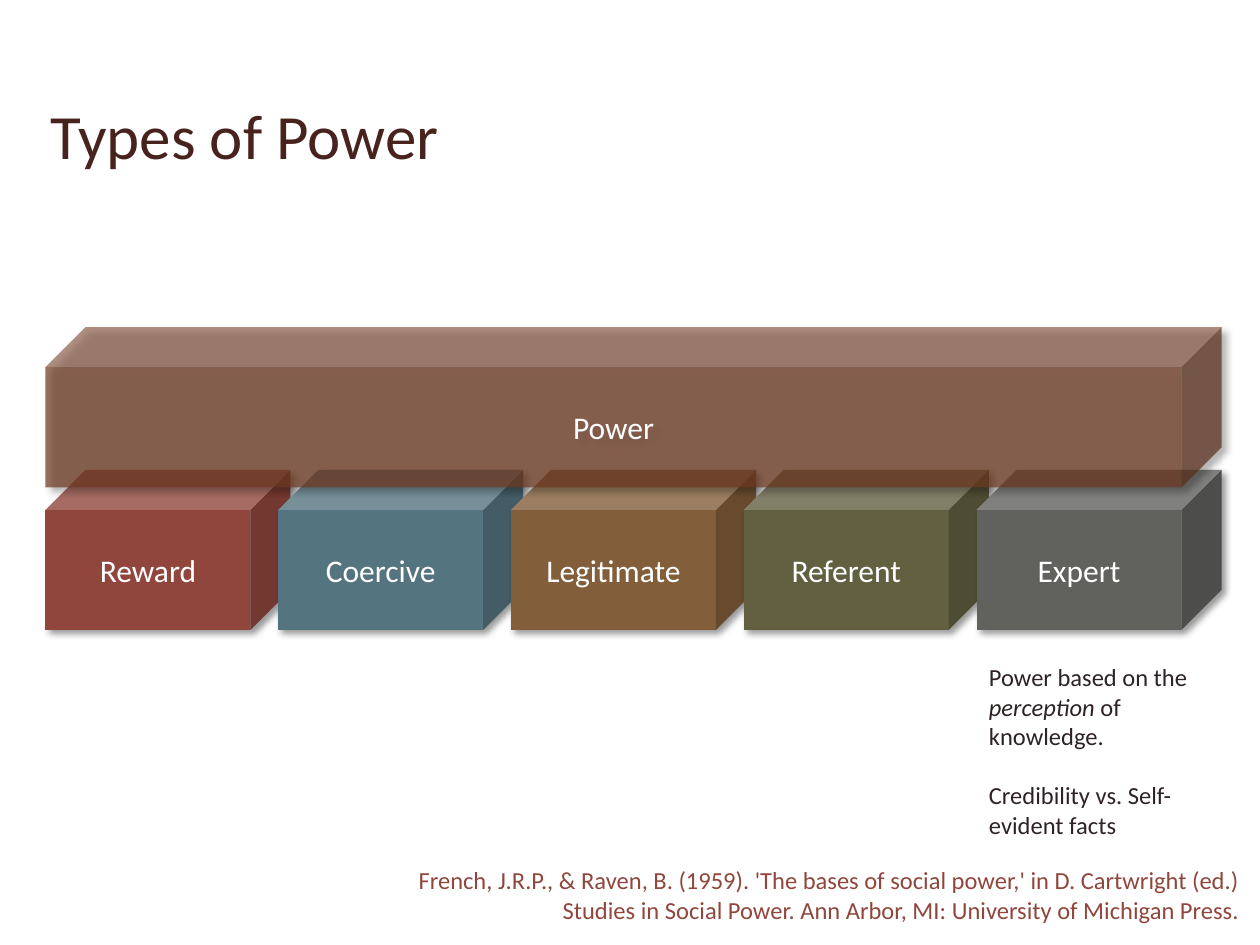
from dataclasses import dataclass

from lxml.etree import SubElement
from pptx import Presentation
from pptx.dml.color import RGBColor
from pptx.enum.shapes import MSO_SHAPE
from pptx.enum.text import MSO_ANCHOR, MSO_AUTO_SIZE, PP_ALIGN
from pptx.oxml.ns import qn
from pptx.util import Pt

FONT = "Calibri"
WHITE = RGBColor(0xFF, 0xFF, 0xFF)
TITLE_BROWN = RGBColor(0x48, 0x23, 0x1E)
TEXT_DARK = RGBColor(0x2E, 0x22, 0x24)
BEAM_BROWN = RGBColor(0x70, 0x3A, 0x21)
RED = RGBColor(0x90, 0x46, 0x3C)
BLUE = RGBColor(0x54, 0x74, 0x80)
OCHRE = RGBColor(0x82, 0x5E, 0x3A)
OLIVE = RGBColor(0x63, 0x60, 0x42)
GREY = RGBColor(0x61, 0x62, 0x5E)

LEFT = 26
PITCH = 133
BLOCK_WIDTH = 140
BLOCK_HEIGHT = 91.5
BLOCK_TOP = 268.5
BEAM_TOP = 187


@dataclass(frozen=True)
class Block:
    label: str
    color: RGBColor
    left: float
    top: float = BLOCK_TOP
    width: float = BLOCK_WIDTH
    opacity: int = 100


POWER_TYPES = [
    ("Reward", RED),
    ("Coercive", BLUE),
    ("Legitimate", OCHRE),
    ("Referent", OLIVE),
    ("Expert", GREY),
]


def add_run(paragraph, text: str, size: float, color: RGBColor, italic: bool = False) -> None:
    run = paragraph.add_run()
    run.text = text
    run.font.name = FONT
    run.font.size = Pt(size)
    run.font.color.rgb = color
    run.font.italic = italic


def add_soft_shadow(shape) -> None:
    shape.shadow.inherit = False
    effects = shape._element.spPr.find(qn("a:effectLst"))
    shadow = SubElement(effects, qn("a:outerShdw"), blurRad=str(Pt(4)),
                        dist=str(Pt(3)), dir=str(45 * 60000), rotWithShape="0")
    color = SubElement(shadow, qn("a:srgbClr"), val="000000")
    SubElement(color, qn("a:alpha"), val="40000")


def set_opacity(shape, percent: int) -> None:
    color = shape._element.spPr.find(qn("a:solidFill")).find(qn("a:srgbClr"))
    SubElement(color, qn("a:alpha"), val=str(percent * 1000))


def add_block(slide, block: Block) -> None:
    shape = slide.shapes.add_shape(MSO_SHAPE.CUBE, Pt(block.left), Pt(block.top),
                                   Pt(block.width), Pt(BLOCK_HEIGHT))
    shape.fill.solid()
    shape.fill.fore_color.rgb = block.color
    if block.opacity < 100:
        set_opacity(shape, block.opacity)
    shape.line.fill.background()
    add_soft_shadow(shape)
    shape.text_frame.vertical_anchor = MSO_ANCHOR.MIDDLE
    paragraph = shape.text_frame.paragraphs[0]
    paragraph.alignment = PP_ALIGN.CENTER
    add_run(paragraph, block.label, 18, WHITE)


def add_text_frame(slide, left: float, top: float, width: float, height: float):
    text_box = slide.shapes.add_textbox(Pt(left), Pt(top), Pt(width), Pt(height))
    text_box.text_frame.word_wrap = True
    return text_box.text_frame


def add_title(slide) -> None:
    title = slide.shapes.title
    title.left, title.top, title.width, title.height = Pt(21.6), Pt(18), Pt(676.8), Pt(84)
    title.text_frame.auto_size = MSO_AUTO_SIZE.NONE
    title.text_frame.vertical_anchor = MSO_ANCHOR.BOTTOM
    paragraph = title.text_frame.paragraphs[0]
    paragraph.alignment = PP_ALIGN.LEFT
    add_run(paragraph, "Types of Power", 36, TITLE_BROWN)


def add_citation(slide) -> None:
    paragraph = add_text_frame(slide, 188, 491, 527.5, 41).paragraphs[0]
    paragraph.alignment = PP_ALIGN.RIGHT
    add_run(paragraph, "French, J.R.P., & Raven, B. (1959). 'The bases of social power,' "
            "in D. Cartwright (ed.) Studies in Social Power. Ann Arbor, MI: "
            "University of Michigan Press.", 14, RED)


def add_expert_note(slide) -> None:
    text_frame = add_text_frame(slide, LEFT + 4 * PITCH, 375, 157, 109)
    definition = text_frame.paragraphs[0]
    add_run(definition, "Power based on the ", 14, TEXT_DARK)
    add_run(definition, "perception", 14, TEXT_DARK, italic=True)
    add_run(definition, " of knowledge.", 14, TEXT_DARK)
    contrast = text_frame.add_paragraph()
    contrast.space_before = Pt(17)
    add_run(contrast, "Credibility vs. Self-evident facts", 14, TEXT_DARK)


def main() -> None:
    presentation = Presentation()
    presentation.slide_width, presentation.slide_height = Pt(720), Pt(540)
    slide = presentation.slides.add_slide(presentation.slide_layouts[5])
    add_title(slide)
    add_citation(slide)
    for index, (label, color) in enumerate(POWER_TYPES):
        add_block(slide, Block(label, color, LEFT + index * PITCH))
    beam_width = (len(POWER_TYPES) - 1) * PITCH + BLOCK_WIDTH
    add_block(slide, Block("Power", BEAM_BROWN, LEFT, BEAM_TOP, beam_width, opacity=71))
    add_expert_note(slide)
    presentation.save("out.pptx")


if __name__ == "__main__":
    main()
